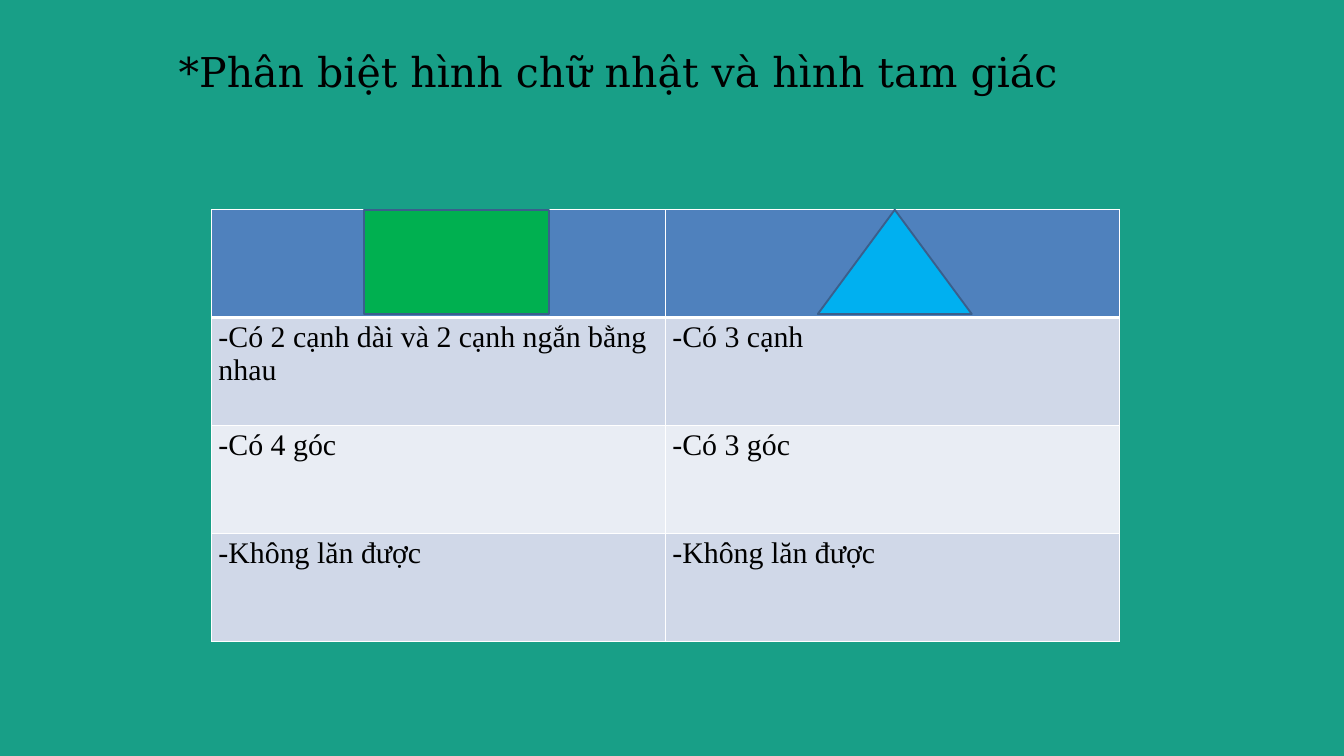
from dataclasses import dataclass

from lxml.etree import SubElement
from pptx import Presentation
from pptx.dml.color import RGBColor
from pptx.enum.shapes import MSO_SHAPE as Shape
from pptx.enum.text import MSO_ANCHOR as Anchor, PP_ALIGN as Align
from pptx.oxml.ns import qn
from pptx.util import Inches, Pt


@dataclass(frozen=True)
class Theme:
    background: str = "189F87"
    text: str = "000000"
    header: str = "4F81BD"
    bands: tuple = ("D0D8E8", "E9EDF4")
    border: str = "FFFFFF"
    outline: str = "3A5F8C"
    rectangle: str = "00B050"
    triangle: str = "00B0F0"
    title_font: str = "DejaVu Serif"
    body_font: str = "Times New Roman"
    title_size: float = 44
    title_spacing: float = 61.6
    body_size: float = 32
    border_width: float = 1
    header_border_width: float = 3
    outline_width: float = 2


class SlideBuilder:
    def __init__(self, presentation, theme):
        self.theme = theme
        self.width = presentation.slide_width
        self.height = presentation.slide_height
        self.slide = presentation.slides.add_slide(presentation.slide_layouts[5])
        self.paint(self.slide.background.fill, theme.background)

    def box(self, left, top, width, height):
        return (
            round(self.width * left / 100),
            round(self.height * top / 100),
            round(self.width * width / 100),
            round(self.height * height / 100),
        )

    def paint(self, fill, color):
        fill.solid()
        fill.fore_color.rgb = RGBColor.from_string(color)

    def style(self, paragraph, font, size):
        for run in paragraph.runs:
            run.font.name = font
            run.font.size = Pt(size)
            run.font.color.rgb = RGBColor.from_string(self.theme.text)

    def title(self, text, *place):
        title = self.slide.shapes.title
        title.left, title.top, title.width, title.height = self.box(*place)
        frame = title.text_frame
        frame.text = text
        frame.word_wrap = True
        frame.vertical_anchor = Anchor.TOP
        frame.margin_left = frame.margin_right = 0
        frame.margin_top = frame.margin_bottom = 0
        paragraph = frame.paragraphs[0]
        paragraph.alignment = Align.CENTER
        paragraph.line_spacing = Pt(self.theme.title_spacing)
        self.style(paragraph, self.theme.title_font, self.theme.title_size)

    def border(self, cell, side, width):
        properties = cell._tc.get_or_add_tcPr()
        line = SubElement(properties, qn(f"a:ln{side}"), w=str(Pt(width)))
        fill = SubElement(line, qn("a:solidFill"))
        SubElement(fill, qn("a:srgbClr"), val=self.theme.border)

    def table(self, rows, *place):
        theme = self.theme
        frame = self.slide.shapes.add_table(len(rows), len(rows[0]), *self.box(*place))
        table = frame.table
        table.horz_banding = False
        for row_index, row in enumerate(rows):
            color = theme.bands[(row_index - 1) % 2] if row_index else theme.header
            heavy_sides = {0: "B", 1: "T"}.get(row_index, "")
            for column_index, text in enumerate(row):
                cell = table.cell(row_index, column_index)
                cell.text = text
                self.style(cell.text_frame.paragraphs[0], theme.body_font, theme.body_size)
                for side in "LRTB":
                    heavy = side in heavy_sides
                    width = theme.header_border_width if heavy else theme.border_width
                    self.border(cell, side, width)
                self.paint(cell.fill, color)

    def figure(self, kind, color, *place):
        shape = self.slide.shapes.add_shape(kind, *self.box(*place))
        shape.shadow.inherit = False
        self.paint(shape.fill, color)
        self.paint(shape.line.fill, self.theme.outline)
        shape.line.width = Pt(self.theme.outline_width)


def main():
    presentation = Presentation()
    presentation.slide_width = Inches(20)
    presentation.slide_height = Inches(11.25)
    theme = Theme()
    builder = SlideBuilder(presentation, theme)

    builder.title("*Phân biệt hình chữ nhật và hình tam giác ", 9.6, 5, 73.85, 7.47)

    comparison = [
        ("", ""),
        ("-Có 2 cạnh dài và 2 cạnh ngắn bằng nhau", "-Có 3 cạnh"),
        ("-Có 4 góc", "-Có 3 góc"),
        ("-Không lăn được", "-Không lăn được"),
    ]
    table_top = 27.75
    figure_height = 13.78
    builder.table(comparison, 15.75, table_top, 67.55, 57.07)
    builder.figure(Shape.RECTANGLE, theme.rectangle, 27.1, table_top, 13.75, figure_height)
    builder.figure(Shape.ISOSCELES_TRIANGLE, theme.triangle, 60.85, table_top, 11.45, figure_height)

    presentation.save("out.pptx")


if __name__ == "__main__":
    main()
